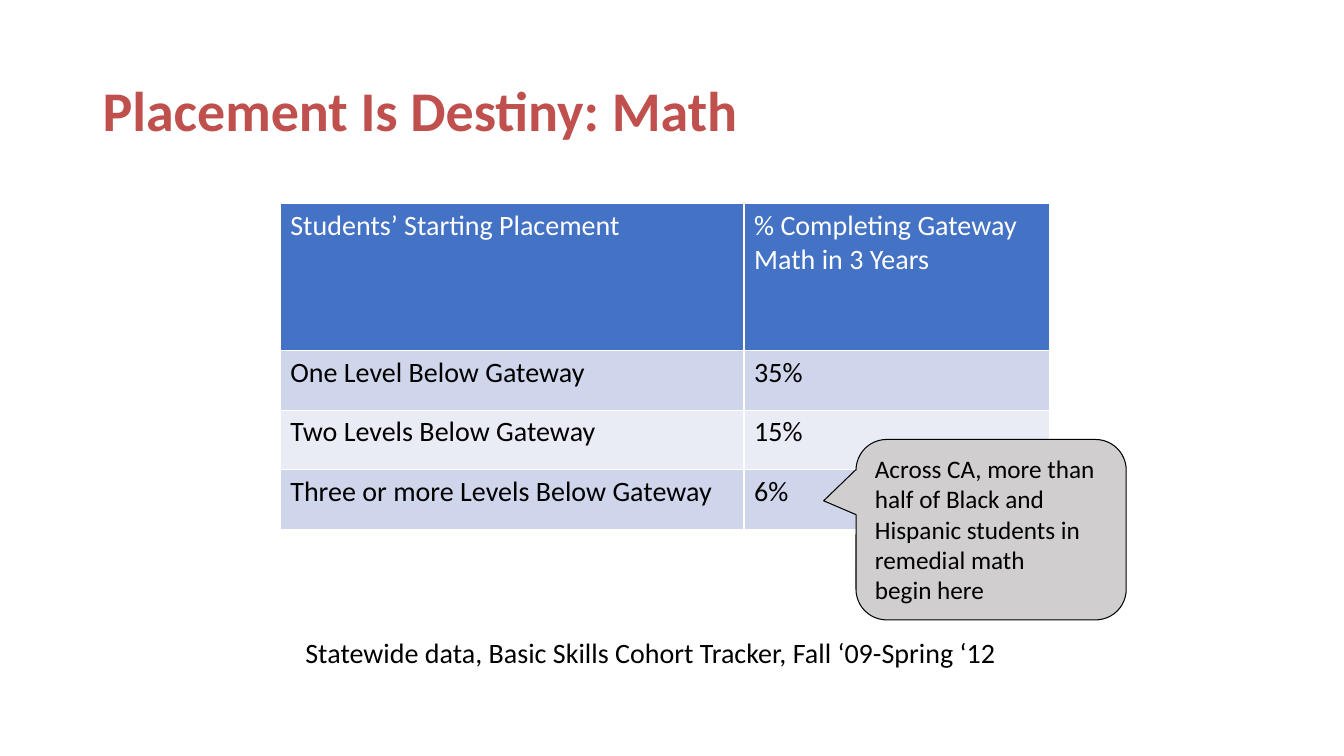
from dataclasses import dataclass

import lxml.etree
import pptx
import pptx.dml.color
import pptx.enum.shapes
import pptx.enum.text
import pptx.oxml.ns
import pptx.util

Inches = pptx.util.Inches
ANCHOR = pptx.enum.text.MSO_ANCHOR


@dataclass(frozen=True)
class Theme:
    font: str = "Calibri"
    title_color: str = "C0504D"
    text_color: str = "000000"
    light: str = "FFFFFF"
    header_fill: str = "4472C4"
    band_fills: tuple[str, str] = ("CFD5EA", "E9EBF5")
    callout_fill: str = "D0CECE"
    title_size: int = 40
    body_size: int = 20
    callout_size: int = 18


@dataclass(frozen=True)
class Box:
    left: float
    top: float
    width: float
    height: float

    def lengths(self) -> list[int]:
        return [Inches(value) for value in (self.left, self.top, self.width, self.height)]


@dataclass(frozen=True)
class TextStyle:
    size: int
    color: str
    bold: bool = False


@dataclass(frozen=True)
class Label:
    box: Box
    text: str
    style: TextStyle
    anchor: ANCHOR = ANCHOR.TOP
    line_spacing: float = 1.0


THEME = Theme()
BODY = TextStyle(THEME.body_size, THEME.text_color)
HEADER = TextStyle(THEME.body_size, THEME.light)

LABELS = (
    Label(Box(0.92, 0.4, 11.5, 1.45), "Placement Is Destiny: Math",
          TextStyle(THEME.title_size, THEME.title_color, True), ANCHOR.MIDDLE, 0.9),
    Label(Box(2.93, 6.26, 7.51, 0.44),
          "Statewide data, Basic Skills Cohort Tracker, Fall ‘09-Spring ‘12", BODY),
)
CALLOUT = Label(
    Box(8.49, 4.36, 2.68, 1.79),
    "Across CA, more than half of Black and Hispanic students in remedial math\nbegin here",
    TextStyle(THEME.callout_size, THEME.text_color),
)
CALLOUT_ADJUSTMENTS = (-0.62, -0.16, 0.17)

TABLE_BOX = Box(2.78, 2.02, 7.63, 3.24)
COLUMN_WIDTHS = (4.6, 3.03)
HEADER_HEIGHT, ROW_HEIGHT = 1.46, 0.59
ROWS = (
    ("Students’ Starting Placement", "% Completing Gateway Math in 3 Years"),
    ("One Level Below Gateway", "35%"),
    ("Two Levels Below Gateway", "15%"),
    ("Three or more Levels Below Gateway", "6%"),
)


def rgb(color: str) -> pptx.dml.color.RGBColor:
    return pptx.dml.color.RGBColor.from_string(color)


def paint(fill, color: str) -> None:
    fill.solid()
    fill.fore_color.rgb = rgb(color)


def write_text(frame, text: str, style: TextStyle, line_spacing: float = 1.0) -> None:
    frame.text = text
    font_values = {"name": THEME.font, "size": pptx.util.Pt(style.size), "bold": style.bold}
    for paragraph in frame.paragraphs:
        paragraph.alignment = pptx.enum.text.PP_ALIGN.LEFT
        paragraph.line_spacing = line_spacing
        for run in paragraph.runs:
            for name, value in font_values.items():
                setattr(run.font, name, value)
            run.font.color.rgb = rgb(style.color)


def fill_label(shape, label: Label) -> None:
    shape.text_frame.word_wrap = True
    shape.text_frame.vertical_anchor = label.anchor
    write_text(shape.text_frame, label.text, label.style, label.line_spacing)


def add_label(slide, label: Label) -> None:
    fill_label(slide.shapes.add_textbox(*label.box.lengths()), label)


def add_cell_borders(cell) -> None:
    properties = cell._tc.get_or_add_tcPr()
    qualified = pptx.oxml.ns.qn
    for side in "LRTB":
        line = lxml.etree.SubElement(properties, qualified(f"a:ln{side}"),
                                     w=str(pptx.util.Pt(1)))
        solid = lxml.etree.SubElement(line, qualified("a:solidFill"))
        lxml.etree.SubElement(solid, qualified("a:srgbClr"), val=THEME.light)


def add_placement_table(slide) -> None:
    table = slide.shapes.add_table(len(ROWS), len(COLUMN_WIDTHS), *TABLE_BOX.lengths()).table
    for column, width in zip(table.columns, COLUMN_WIDTHS):
        column.width = Inches(width)
    for row_index, texts in enumerate(ROWS):
        is_header = row_index == 0
        table.rows[row_index].height = Inches(HEADER_HEIGHT if is_header else ROW_HEIGHT)
        color = THEME.header_fill if is_header else THEME.band_fills[(row_index - 1) % 2]
        for column_index, text in enumerate(texts):
            cell = table.cell(row_index, column_index)
            write_text(cell.text_frame, text, HEADER if is_header else BODY)
            add_cell_borders(cell)
            paint(cell.fill, color)


def add_callout(slide, label: Label) -> None:
    callout = slide.shapes.add_shape(
        pptx.enum.shapes.MSO_SHAPE.ROUNDED_RECTANGULAR_CALLOUT, *label.box.lengths())
    callout.shadow.inherit = False
    for index, value in enumerate(CALLOUT_ADJUSTMENTS):
        callout.adjustments[index] = value
    paint(callout.fill, THEME.callout_fill)
    paint(callout.line.fill, THEME.text_color)
    callout.line.width = pptx.util.Pt(0.75)
    fill_label(callout, label)


def main() -> None:
    presentation = pptx.Presentation()
    presentation.slide_width = Inches(13.33)
    presentation.slide_height = Inches(7.5)
    slide = presentation.slides.add_slide(presentation.slide_layouts[6])

    # Title and data credit
    for label in LABELS:
        add_label(slide, label)

    # Completion rates, with the callout over the last row
    add_placement_table(slide)
    add_callout(slide, CALLOUT)

    presentation.save("out.pptx")


if __name__ == "__main__":
    main()
